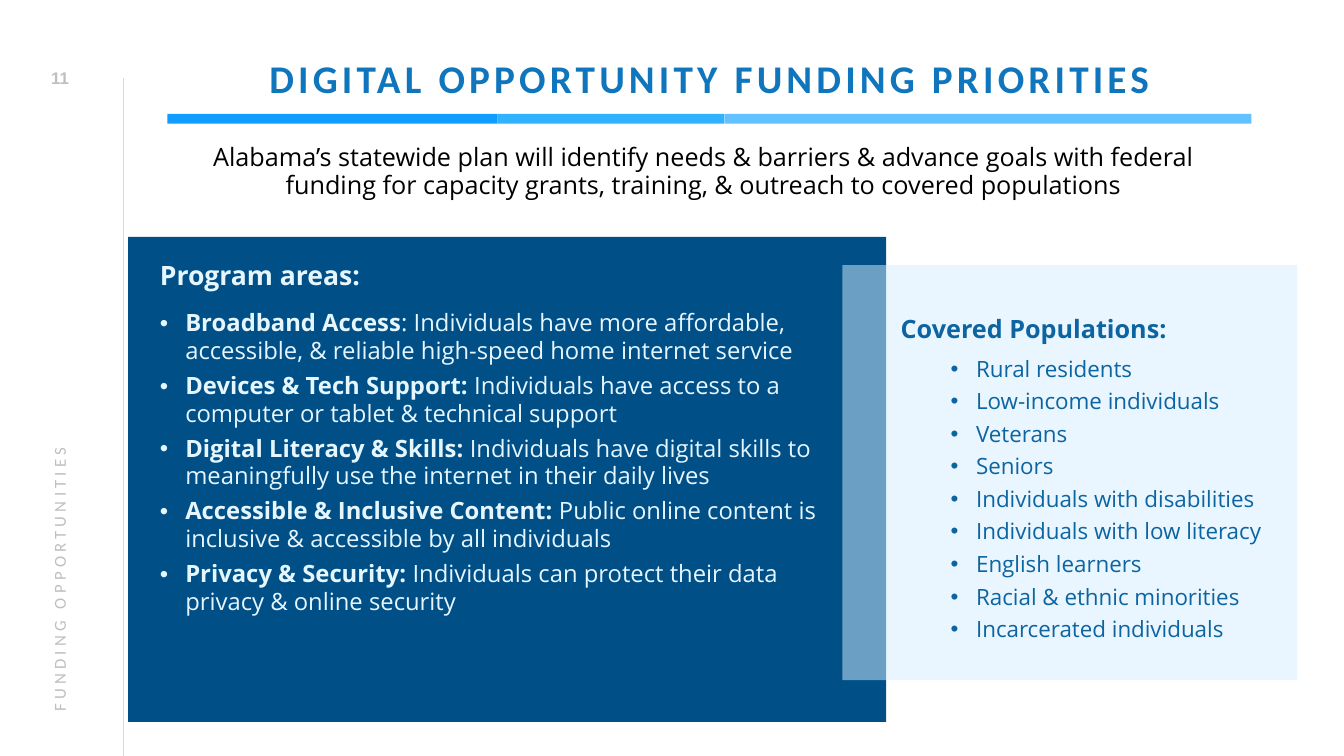
import pptx
import pptx.dml.color
import pptx.enum.shapes
import pptx.enum.text
import pptx.oxml.ns
import pptx.util
from lxml import etree

Cm, Pt = pptx.util.Cm, pptx.util.Pt
RGB = pptx.dml.color.RGBColor.from_string
RECT = pptx.enum.shapes.MSO_SHAPE.RECTANGLE
CENTER = pptx.enum.text.PP_ALIGN.CENTER
MIDDLE = pptx.enum.text.MSO_ANCHOR.MIDDLE
qn = pptx.oxml.ns.qn

COLORS = {
    "rule": "D9D9D9", "muted": "BFBFBF", "title": "0F75BC", "black": "000000",
    "bar1": "119DFF", "bar2": "31B2FF", "bar3": "62C1FF",
    "navy": "005087", "pale": "D6EFFF", "ice": "E6F6FF", "blue": "0C64A0",
}

prs = pptx.Presentation()
prs.slide_width, prs.slide_height = Cm(33.87), Cm(19.05)
s = prs.slides.add_slide(prs.slide_layouts[5])


def write(p, parts, size, color, font="Open Sans", spacing=0, bullet=None):
    """Fill a paragraph with (text, bold) parts; bullet is its left indent in cm."""
    if bullet:
        pPr = p._p.get_or_add_pPr()
        pPr.set("marL", str(Cm(bullet)))
        pPr.set("indent", str(-Cm(0.64)))
        etree.SubElement(pPr, qn("a:buFont")).set("typeface", "Arial")
        etree.SubElement(pPr, qn("a:buChar")).set("char", "•")
    for text, bold in parts:
        r = p.add_run()
        r.text = text
        r.font.name, r.font.size, r.font.bold = font, Pt(size), bold
        r.font.color.rgb = RGB(COLORS[color])
        if spacing:
            r._r.get_or_add_rPr().set("spc", str(spacing * 100))


def add_box(x, y, w, h, fill=None):
    """Add a filled rectangle, or a wrapping text box when there is no fill."""
    area = Cm(x), Cm(y), Cm(w), Cm(h)
    if fill is None:
        sp = s.shapes.add_textbox(*area)
        sp.text_frame.word_wrap = True
        return sp
    sp = s.shapes.add_shape(RECT, *area)
    sp.shadow.inherit = False
    sp.fill.solid()
    sp.fill.fore_color.rgb = RGB(COLORS[fill])
    sp.line.fill.background()
    return sp


# Margin rule and three-part bar under the title
rule = s.shapes.add_connector(pptx.enum.shapes.MSO_CONNECTOR.STRAIGHT,
                              Cm(3.1), Cm(19.05), Cm(3.1), Cm(1.96))
rule.line.color.rgb = RGB(COLORS["rule"])
rule.line.width = Pt(0.5)
etree.SubElement(rule._element.spPr, qn("a:effectLst"))

x = 4.22
for fill, width in (("bar1", 8.32), ("bar2", 5.72), ("bar3", 13.28)):
    add_box(x, 2.87, width, 0.25, fill)
    x += width

# Title
title = s.shapes.title
title.left, title.top, title.width, title.height = Cm(4.22), Cm(1.02), Cm(27.33), Cm(1.9)
tf = title.text_frame
tf.auto_size = pptx.enum.text.MSO_AUTO_SIZE.NONE
tf.vertical_anchor = MIDDLE
tf.margin_left = tf.margin_right = tf.margin_bottom = 0
p = tf.paragraphs[0]
p.alignment, p.line_spacing = CENTER, 0.9
write(p, [("DIGITAL OPPORTUNITY FUNDING PRIORITIES", True)], 28, "title", "Calibri", 3)

# Section name and page number in the margin
section = add_box(-6.15, 10.03, 15.29, 1.02)
section.rotation = 270
section.text_frame.vertical_anchor = MIDDLE
write(section.text_frame.paragraphs[0], [("FUNDING OPPORTUNITIES", False)],
      12, "muted", "Calibri", 3)

number = add_box(0.69, 1.45, 1.65, 1.02)
number.text_frame.vertical_anchor = MIDDLE
p = number.text_frame.paragraphs[0]
p.alignment = CENTER
write(p, [("11", True)], 12, "muted", "Arial")

# Introduction
tf = add_box(4.19, 3.53, 27.33, 1.8).text_frame
tf.margin_left = 0
p = tf.paragraphs[0]
p.alignment, p.line_spacing = CENTER, 0.9
write(p, [("Alabama’s statewide plan will identify needs & barriers & advance goals "
           "with federal funding for capacity grants, training, & outreach to "
           "covered populations", False)], 18, "black")

# Overlapping panels
add_box(3.23, 5.97, 19.1, 12.22, "navy")
panel = add_box(21.23, 6.68, 11.46, 10.46, "pale")
color = panel._element.spPr.find(qn("a:solidFill"))[0]
etree.SubElement(color, qn("a:alpha")).set("val", "50000")

# Program areas
areas = [
    ("Broadband Access", ": Individuals have more affordable, accessible, & reliable "
     "high-speed home internet service"),
    ("Devices & Tech Support:", " Individuals have access to a computer or tablet "
     "& technical support"),
    ("Digital Literacy & Skills:", " Individuals have digital skills to meaningfully "
     "use the internet in their daily lives"),
    ("Accessible & Inclusive Content:", " Public online content is inclusive "
     "& accessible by all individuals"),
    ("Privacy & Security:", " Individuals can protect their data privacy "
     "& online security"),
]
tf = add_box(3.78, 6.5, 17.55, 11.18).text_frame
p = tf.paragraphs[0]
p.line_spacing, p.space_after = 0.9, Pt(8)
write(p, [("Program areas:", True)], 19, "ice")
for name, goal in areas:
    p = tf.add_paragraph()
    write(p, [(name, True), (goal, False)], 17, "ice", bullet=0.64)
    p.line_spacing, p.space_after = 0.97, Pt(5.2)
tf.paragraphs[1].space_before = Pt(5)

# Covered populations
populations = [
    "Rural residents", "Low-income individuals", "Veterans", "Seniors",
    "Individuals with disabilities", "Individuals with low literacy",
    "English learners", "Racial & ethnic minorities", "Incarcerated individuals",
]
tf = add_box(22.45, 7.85, 10.26, 9.93).text_frame
p = tf.paragraphs[0]
p.line_spacing, p.space_after = 0.9, Pt(10)
write(p, [("Covered Populations:", True)], 18, "blue")
for population in populations:
    p = tf.add_paragraph()
    p.level = 1
    write(p, [(population, False)], 16, "blue", bullet=1.9)
    p.line_spacing, p.space_after = 0.9, Pt(6)

prs.save("out.pptx")
